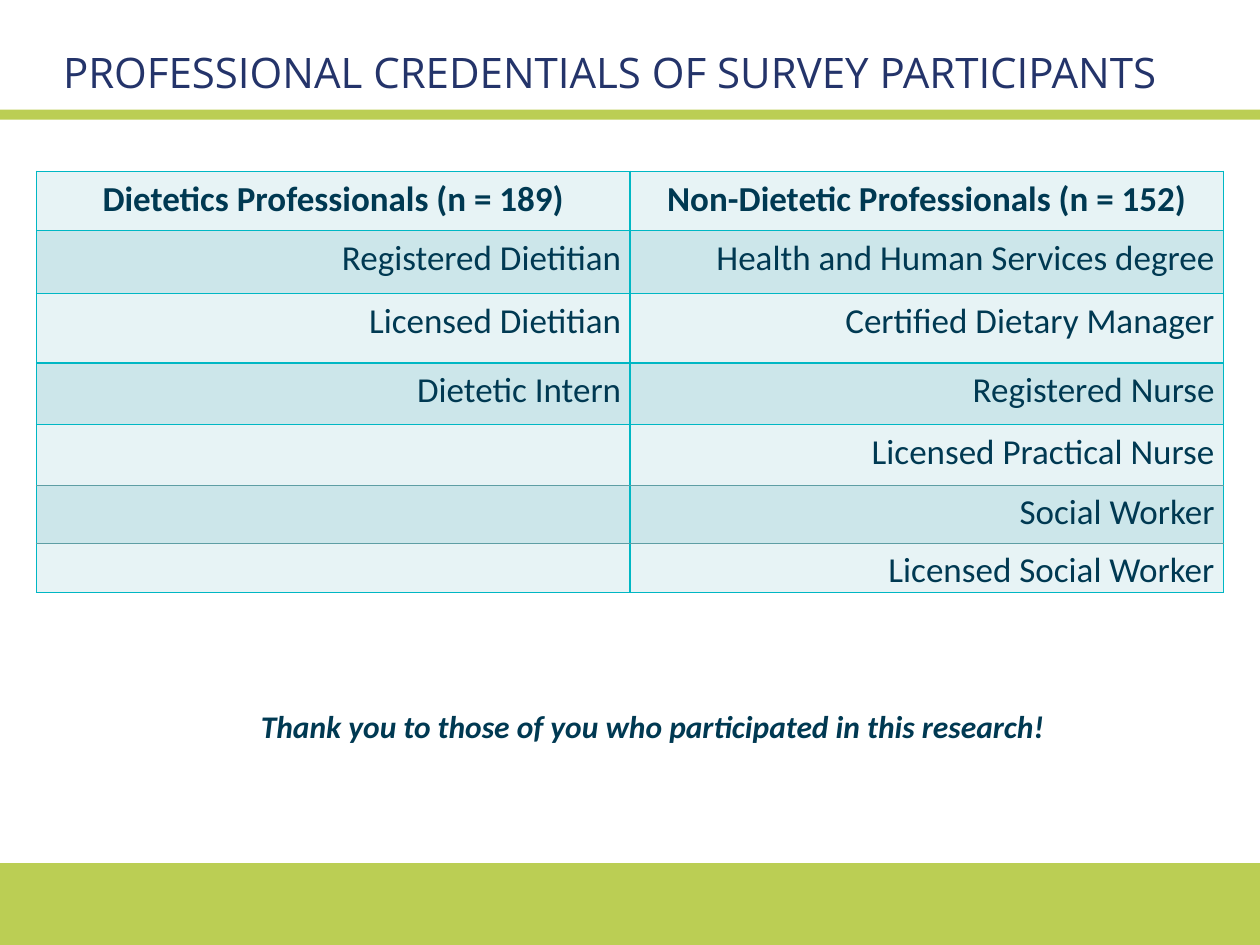
from itertools import zip_longest

from lxml.etree import SubElement
from pptx import Presentation
from pptx.dml.color import RGBColor
from pptx.enum.shapes import MSO_SHAPE
from pptx.enum.text import MSO_ANCHOR, PP_ALIGN
from pptx.oxml.ns import qn
from pptx.util import Inches, Pt

COLORS = {
    "bar": "BBCE54",
    "title": "24346A",
    "text": "003952",
    "border": "00B7C4",
    "thin": "5E9EA4",
    "light": "E7F3F5",
    "dark": "CCE6EA",
}
HEADERS = ["Dietetics Professionals (n = 189)", "Non-Dietetic Professionals (n = 152)"]
DIETETIC = ["Registered Dietitian", "Licensed Dietitian", "Dietetic Intern"]
NON_DIETETIC = [
    "Health and Human Services degree",
    "Certified Dietary Manager",
    "Registered Nurse",
    "Licensed Practical Nurse",
    "Social Worker",
    "Licensed Social Worker",
]
ROW_HEIGHTS = [0.47, 0.5, 0.55, 0.49, 0.48, 0.46, 0.39]
THIN_RULES = {5, 6}


def rgb(name):
    """Return the named colour."""
    return RGBColor.from_string(COLORS[name])


def style(p, font, size, color, bold=False, italic=False):
    """Set the font of a paragraph."""
    p.font.name, p.font.size = font, Pt(size)
    p.font.bold, p.font.italic = bold, italic
    p.font.color.rgb = rgb(color)


def set_margins(tf, size):
    """Give a text frame equal margins."""
    tf.margin_left = tf.margin_right = tf.margin_top = tf.margin_bottom = Inches(size)


def add_bar(slide, x, y, w, h):
    """Add a plain horizontal colour bar."""
    sp = slide.shapes.add_shape(MSO_SHAPE.RECTANGLE, Inches(x), Inches(y), Inches(w), Inches(h))
    sp.shadow.inherit = False
    sp.fill.solid()
    sp.fill.fore_color.rgb = rgb("bar")
    sp.line.fill.background()


def place_title(slide, text, x, y, w, h):
    """Move and format the title placeholder."""
    sp = slide.shapes.title
    sp.left, sp.top, sp.width, sp.height = Inches(x), Inches(y), Inches(w), Inches(h)
    tf = sp.text_frame
    tf.text = text
    tf.vertical_anchor = MSO_ANCHOR.MIDDLE
    set_margins(tf, 0)
    p = tf.paragraphs[0]
    p.alignment = PP_ALIGN.LEFT
    style(p, "Open Sans", 24, "title")


def add_border(cell, side, color, width):
    """Draw one edge of a table cell."""
    ln = SubElement(cell._tc.get_or_add_tcPr(), qn(f"a:ln{side}"), w=str(Pt(width)))
    fill = SubElement(ln, qn("a:solidFill"))
    SubElement(fill, qn("a:srgbClr"), val=COLORS[color])


def format_cell(cell, text, row):
    """Fill, border and letter one table cell."""
    edges = {"L": None, "R": None, "T": row, "B": row + 1}
    for side, rule in edges.items():
        add_border(cell, side, *(("thin", 0.5) if rule in THIN_RULES else ("border", 1)))
    cell.fill.solid()
    cell.fill.fore_color.rgb = rgb("dark" if row % 2 else "light")
    cell.margin_left = cell.margin_right = Inches(0.07)
    cell.margin_top = cell.margin_bottom = 0
    cell.text = text
    p = cell.text_frame.paragraphs[0]
    p.line_spacing = 1.15
    p.alignment = PP_ALIGN.RIGHT if row else PP_ALIGN.CENTER
    if row == 0:
        p.space_after = Pt(6)
    style(p, "Calibri", 20, "text", bold=row == 0)


def add_credentials(slide, x, y, w, h):
    """Add the table of credentials."""
    rows = [HEADERS, *zip_longest(DIETETIC, NON_DIETETIC, fillvalue="")]
    table = slide.shapes.add_table(
        len(rows), 2, Inches(x), Inches(y), Inches(w), Inches(h)
    ).table
    for i, (height, texts) in enumerate(zip(ROW_HEIGHTS, rows)):
        table.rows[i].height = Inches(height)
        for j, text in enumerate(texts):
            format_cell(table.cell(i, j), text, i)


def add_thanks(slide, text, x, y, w, h):
    """Add the closing thank-you line."""
    tf = slide.shapes.add_textbox(Inches(x), Inches(y), Inches(w), Inches(h)).text_frame
    tf.word_wrap = True
    set_margins(tf, 0.05)
    p = tf.paragraphs[0]
    p.text = text
    style(p, "Calibri", 18, "text", bold=True, italic=True)


def main():
    """Build and save the slide."""
    prs = Presentation()
    prs.slide_width, prs.slide_height = Inches(10), Inches(7.5)
    slide = prs.slides.add_slide(prs.slide_layouts[5])
    add_bar(slide, 0, 6.85, 10, 0.65)
    add_bar(slide, 0, 0.87, 10, 0.08)
    place_title(slide, "PROFESSIONAL CREDENTIALS OF SURVEY PARTICIPANTS", 0.5, 0.3, 9, 0.54)
    add_credentials(slide, 0.29, 1.36, 9.42, sum(ROW_HEIGHTS))
    add_thanks(slide, "Thank you to those of you who participated in this research!",
               2.02, 5.56, 6.92, 0.4)
    prs.save("out.pptx")


if __name__ == "__main__":
    main()
